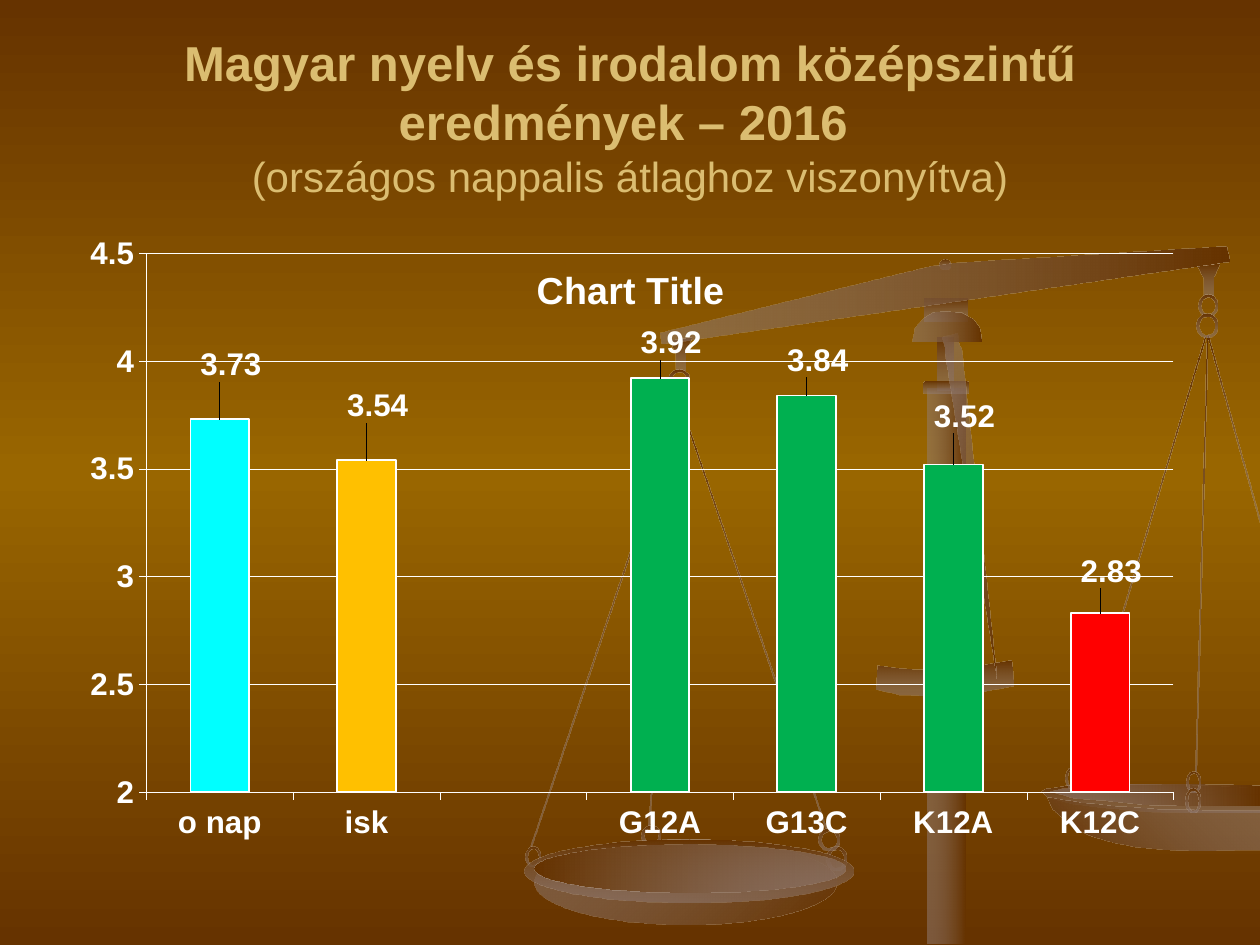
from copy import deepcopy

from lxml.etree import SubElement
from pptx import Presentation
from pptx.chart.data import CategoryChartData
from pptx.dml.color import RGBColor
from pptx.enum.chart import XL_CHART_TYPE as ChartType
from pptx.enum.chart import XL_LABEL_POSITION as LabelPosition
from pptx.enum.chart import XL_TICK_LABEL_POSITION as TickLabels
from pptx.enum.chart import XL_TICK_MARK as TickMark
from pptx.enum.shapes import MSO_SHAPE as Preset
from pptx.enum.text import MSO_ANCHOR as Anchor
from pptx.enum.text import PP_ALIGN as Align
from pptx.oxml.ns import qn
from pptx.util import Inches, Pt

BROWN = RGBColor(0x66, 0x33, 0x00)
OCHRE = RGBColor(0x99, 0x66, 0x00)
TAUPE = RGBColor(0x93, 0x7F, 0x79)
SAND = RGBColor(0xDB, 0xBD, 0x71)
WHITE = RGBColor(0xFF, 0xFF, 0xFF)
PALE = RGBColor(0xCC, 0xFF, 0xFF)
CYAN = RGBColor(0x00, 0xFF, 0xFF)
AMBER = RGBColor(0xFF, 0xC0, 0x00)
GREEN = RGBColor(0x00, 0xB0, 0x50)
RED = RGBColor(0xFF, 0x00, 0x00)
FONT = "Arial"
LABEL_SIZE = 17.9

# Category, value, bar colour, upward shift of the label
RESULTS = [
    ("o nap", 3.73, CYAN, -0.05), ("isk", 3.54, AMBER, -0.05),
    ("", None, None, 0), ("G12A", 3.92, GREEN, -0.02),
    ("G13C", 3.84, GREEN, -0.02), ("K12A", 3.52, GREEN, -0.04),
    ("K12C", 2.83, RED, -0.03),
]

# Scales: left, top, height, rotation of the cords
CORDS = [(9.04, 2.6, 3.6, 16.6), (9.53, 2.66, 3.47, 1.5),
         (9.79, 2.64, 1.53, 344.6), (5.98, 3.15, 3.53, 341),
         (4.79, 3.16, 3.68, 18.6), (5.27, 3.25, 3.31, 4.2)]
# Scales: left, top, width, height of the chain links
UPPER_LINKS = [(8.46, 6.09, 0.11, 0.17), (5.31, 2.93, 0.16, 0.17),
               (5.31, 3.07, 0.16, 0.19), (9.51, 2.34, 0.15, 0.17),
               (9.5, 2.49, 0.16, 0.19), (9.42, 6.12, 0.11, 0.17),
               (5.09, 6.55, 0.15, 0.16), (6.56, 6.72, 0.16, 0.19),
               (4.17, 6.72, 0.12, 0.16)]
LOWER_LINKS = [(6.5, 6.58, 0.16, 0.17), (9.41, 6.26, 0.12, 0.19)]
# Scales: outlines
HOOK = [(0.18, 0), (0, 0.02), (0.05, 0.12), (0.05, 0.26), (0.13, 0.26), (0.13, 0.11)]
CRADLE = [(6.97, 5.28), (7.24, 5.31), (7.39, 5.31), (7.57, 5.3), (7.78, 5.28),
          (8.02, 5.24), (8.04, 5.44), (7.82, 5.48), (7.68, 5.51), (7.51, 5.52),
          (7.33, 5.52), (7.14, 5.51), (6.96, 5.47)]
PAN_RIM = [(10, 6.26), (9.58, 6.24), (8.85, 6.23), (8.46, 6.24), (8.31, 6.26),
           (8.27, 6.28), (8.32, 6.33), (8.52, 6.38), (8.78, 6.41), (9.14, 6.44),
           (9.58, 6.45), (10, 6.45)]
PAN_BOWL = [(8.31, 6.33), (8.35, 6.42), (8.52, 6.57), (8.65, 6.63), (8.82, 6.68),
            (9.03, 6.72), (9.28, 6.74), (9.57, 6.75), (10, 6.74), (10, 6.43),
            (9.53, 6.43), (9.18, 6.42), (8.86, 6.4), (8.57, 6.37)]
PAN_INSIDE = [(10, 6.24), (9.56, 6.23), (8.69, 6.23), (8.43, 6.26), (8.34, 6.28),
              (8.52, 6.33), (8.78, 6.35), (9.12, 6.38), (9.55, 6.39), (10, 6.39)]
BEAM = [(9.73, 1.96), (9.76, 2.08), (5.25, 2.73), (5.24, 2.64), (7.37, 2.12),
        (7.59, 2.09)]
POINTER = [(7.91, 5.39), (7.5, 2.8), (7.5, 2.76), (7.48, 2.68), (7.6, 2.65),
           (7.61, 2.74), (7.63, 2.77)]
CAP = [(7.52, 2.47), (7.63, 2.48), (7.72, 2.53), (7.77, 2.6), (7.79, 2.71),
       (7.24, 2.71), (7.26, 2.6), (7.32, 2.53), (7.4, 2.48)]


def paint_background(page):
    fill = page.background.fill
    fill.gradient()
    fill.gradient_angle = 270
    stop_list = page._element.find(".//" + qn("a:gsLst"))
    stop_list.insert(1, deepcopy(stop_list[0]))
    for stop, color, place in zip(fill.gradient_stops, (BROWN, OCHRE, BROWN), (0, 0.5, 1)):
        stop.color.rgb = color
        stop.position = place


def paint_metal(shape, angle=90, light_first=False):
    """Fill with a clockwise brown gradient whose light end is half transparent."""
    shape.shadow.inherit = False
    shape.line.fill.background()
    shape.fill.gradient()
    shape.fill.gradient_angle = (360 - angle) % 360
    colors = (TAUPE, BROWN) if light_first else (BROWN, TAUPE)
    for stop, color in zip(shape.fill.gradient_stops, colors):
        stop.color.rgb = color
    light = shape._element.spPr.findall(".//" + qn("a:srgbClr"))[0 if light_first else 1]
    SubElement(light, qn("a:alpha"), val="50000")


def add_part(group, preset, bounds, rotation=0, **metal):
    shape = group.shapes.add_shape(preset, *map(Inches, bounds))
    shape.rotation = rotation
    paint_metal(shape, **metal)
    return shape


def add_outline(group, points, **metal):
    corners = [(Inches(x), Inches(y)) for x, y in points]
    builder = group.shapes.build_freeform(*corners[0])
    builder.add_line_segments(corners[1:], close=True)
    paint_metal(builder.convert_to_shape(), **metal)


def add_links(group, links):
    for bounds in links:
        add_part(group, Preset.DONUT, bounds).adjustments[0] = 0.14


def add_scales(page):
    group = page.shapes.add_group_shape()
    # Top of the column and cords
    add_part(group, Preset.RECTANGLE, (7.34, 2.37, 0.34, 0.18))
    add_part(group, Preset.OVAL, (7.46, 2.06, 0.08, 0.08))
    for left, top, height, rotation in CORDS:
        add_part(group, Preset.RECTANGLE, (left, top, 0.01, height), rotation)
    # Right pan
    add_outline(group, CRADLE)
    add_outline(group, PAN_RIM)
    add_outline(group, PAN_BOWL, angle=315)
    add_outline(group, PAN_INSIDE, angle=0, light_first=True)
    # Hooks, chains and beam
    for left, top in ((5.31, 2.68), (9.5, 2.09)):
        add_outline(group, [(left + x, top + y) for x, y in HOOK])
    add_links(group, UPPER_LINKS)
    add_outline(group, BEAM, angle=0, light_first=True)
    # Left pan
    add_part(group, Preset.OVAL, (4.24, 6.66, 2.4, 0.68), angle=45, light_first=True)
    add_part(group, Preset.OVAL, (4.16, 6.66, 2.61, 0.5))
    add_part(group, Preset.OVAL, (4.24, 6.7, 2.47, 0.38), angle=0)
    add_links(group, LOWER_LINKS)
    # Column
    add_part(group, Preset.RECTANGLE, (7.36, 3.08, 0.3, 4.41), angle=0, light_first=True)
    add_part(group, Preset.RECTANGLE, (7.44, 2.68, 0.13, 0.42))
    add_part(group, Preset.ROUNDED_RECTANGLE, (7.33, 3.03, 0.36, 0.09))
    add_outline(group, POINTER, angle=45, light_first=True)
    add_outline(group, CAP, angle=0, light_first=True)


def style_font(font, size=LABEL_SIZE, color=WHITE, bold=True):
    font.name, font.size, font.bold = FONT, Pt(size), bold
    font.color.rgb = color


def add_span(para, text, **style):
    span = para.add_run()
    span.text = text
    style_font(span.font, **style)


def add_title(page):
    box = page.shapes.add_textbox(Inches(0.5), Inches(0.3), Inches(9), Inches(1.25))
    frame = box.text_frame
    frame.word_wrap = True
    frame.vertical_anchor = Anchor.MIDDLE
    para = frame.paragraphs[0]
    para.alignment = Align.CENTER
    add_span(para, "Magyar nyelv és irodalom középszintű eredmények – 2016 ", size=28, color=SAND)
    para.add_line_break()
    add_span(para, "(országos nappalis átlaghoz viszonyítva)", size=24, color=SAND, bold=False)


def set_layout(parent, index, **values):
    for old in parent.findall(qn("c:layout")):
        parent.remove(old)
    layout = SubElement(parent, qn("c:layout"))
    parent.insert(index, layout)
    manual = SubElement(layout, qn("c:manualLayout"))
    for name, value in values.items():
        SubElement(manual, qn(f"c:{name}"), val=str(value))


def style_line(line, width):
    line.color.rgb = WHITE
    line.width = Pt(width)


def add_results_chart(page):
    data = CategoryChartData()
    data.categories = [row[0] for row in RESULTS]
    data.add_series("Series 1", [row[1] for row in RESULTS])
    chart = page.shapes.add_chart(ChartType.COLUMN_CLUSTERED, Inches(0.58), Inches(1.8),
                                  Inches(8.84), Inches(5.1), data).chart
    style_font(chart.font)
    chart.has_legend = False
    # Title over the plot
    add_span(chart.chart_title.text_frame.paragraphs[0], "Chart Title", size=21.5)
    title = chart.chart_title._element
    title.find(qn("c:overlay")).set("val", "1")
    set_layout(title, 1, xMode="edge", yMode="edge", x=0.41, y=0.05)
    set_layout(chart._chartSpace.find(".//" + qn("c:plotArea")), 0, layoutTarget="inner",
               xMode="edge", yMode="edge", x=0.066, y=0.041, w=0.922, h=0.839)
    # Axes
    for axis in (chart.category_axis, chart.value_axis):
        axis.major_tick_mark = TickMark.OUTSIDE
        style_font(axis.tick_labels.font)
        style_line(axis.format.line, 0.25)
    chart.category_axis.tick_label_position = TickLabels.LOW
    scale = chart.value_axis
    scale.minimum_scale, scale.maximum_scale, scale.major_unit = 2, 4.5, 0.5
    style_line(scale.major_gridlines.format.line, 0.25)
    # Bars and their labels
    plot = chart.plots[0]
    plot.gap_width = 150
    plot.vary_by_categories = False
    series = plot.series[0]
    series.format.fill.solid()
    series.format.fill.fore_color.rgb = PALE
    style_line(series.format.line, 1)
    series.data_labels.show_value = True
    style_font(series.data_labels.font)
    for index, (_, value, color, shift) in enumerate(RESULTS):
        if value is None:
            continue
        point = series.points[index]
        point.format.fill.solid()
        point.format.fill.fore_color.rgb = color
        style_line(point.format.line, 1)
        style_font(point.data_label.font)
        point.data_label.position = LabelPosition.OUTSIDE_END
        set_layout(series._element.findall(".//" + qn("c:dLbl"))[-1], 1, x=0.01, y=shift)


def main():
    deck = Presentation()
    deck.slide_width, deck.slide_height = Inches(10), Inches(7.5)
    page = deck.slides.add_slide(deck.slide_layouts[6])
    paint_background(page)
    add_scales(page)
    add_title(page)
    add_results_chart(page)
    deck.save("out.pptx")


if __name__ == "__main__":
    main()
